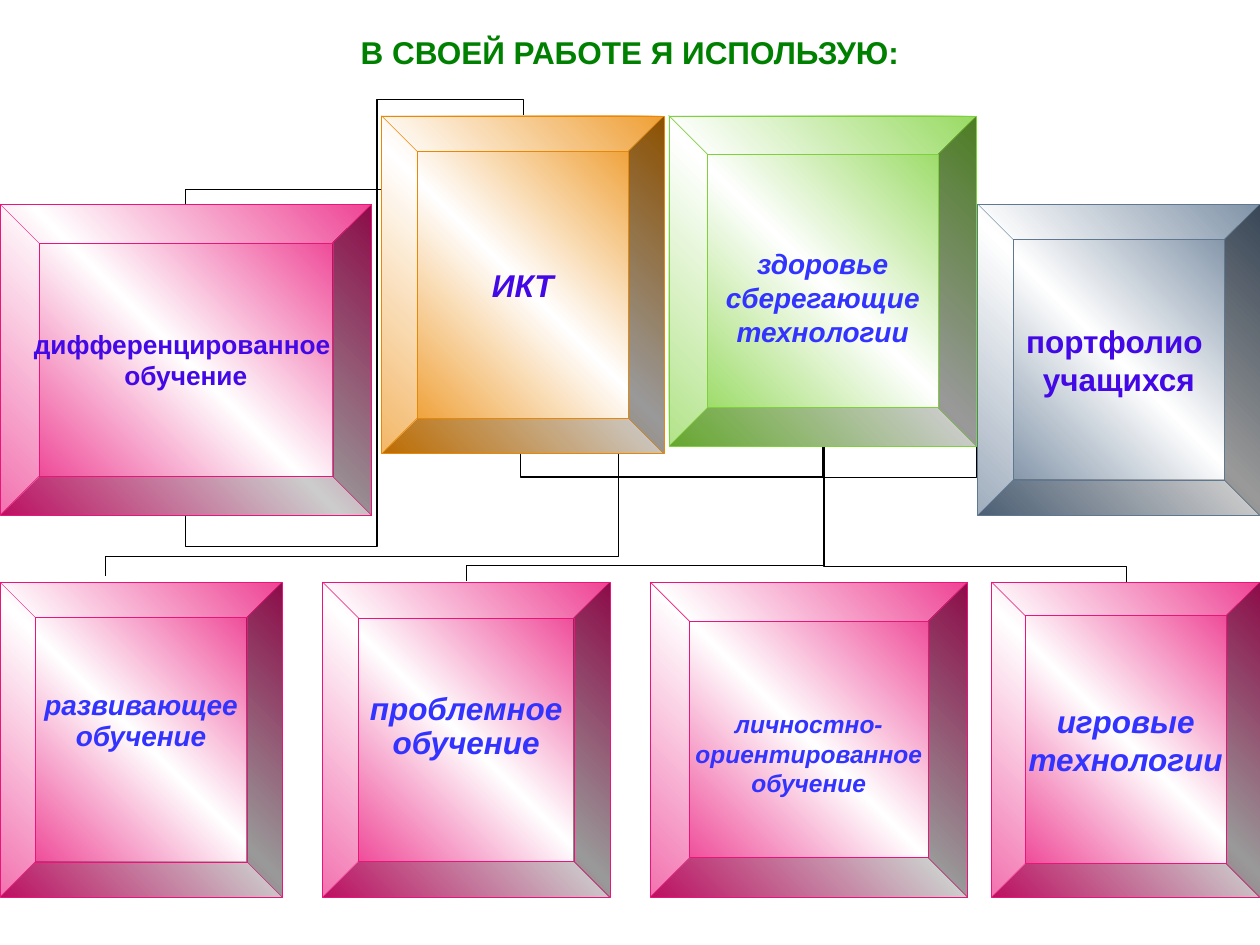
from copy import deepcopy

from pptx import Presentation
from pptx.dml.color import RGBColor
from pptx.enum.shapes import MSO_CONNECTOR, MSO_SHAPE
from pptx.enum.text import MSO_ANCHOR, PP_ALIGN
from pptx.oxml.ns import qn
from pptx.oxml.xmlchemy import OxmlElement
from pptx.util import Inches, Pt

GREEN = RGBColor(0x00, 0x80, 0x00)
BLACK = RGBColor(0x00, 0x00, 0x00)
WHITE = RGBColor(0xFF, 0xFF, 0xFF)
BLUE = RGBColor(0x33, 0x33, 0xFF)
VIOLET = RGBColor(0x42, 0x08, 0xE6)
PINK = RGBColor(0xEA, 0x15, 0x7A)
LIME = RGBColor(0x7F, 0xD1, 0x3B)
ORANGE = RGBColor(0xEB, 0x88, 0x03)
SLATE = RGBColor(0x5F, 0x77, 0x91)

LOWER_TOP, LOWER_HEIGHT = 4.62, 2.5
SIDE_TOP, SIDE_HEIGHT = 1.62, 2.47


class SlideBuilder:
    def __init__(self, slide, font="Arial"):
        self.slide = slide
        self.font = font

    def add_run(self, paragraph, text, size, color, italic=False):
        paragraph.alignment = PP_ALIGN.CENTER
        run = paragraph.add_run()
        run.text = text
        run.font.name = self.font
        run.font.size = Pt(size)
        run.font.bold = True
        run.font.italic = italic
        run.font.color.rgb = color

    def title(self, text, left, top, width, height):
        shape = self.slide.shapes.title
        shape.left, shape.top = Inches(left), Inches(top)
        shape.width, shape.height = Inches(width), Inches(height)
        shape.text_frame.vertical_anchor = MSO_ANCHOR.MIDDLE
        self.add_run(shape.text_frame.paragraphs[0], text, 18, GREEN)

    def elbow(self, left, top, width, height, rotation, flips, adjustments):
        """Draw a bent connector; the box is the one before rotation."""
        x_ends = [Inches(left), Inches(left + width)]
        y_ends = [Inches(top), Inches(top + height)]
        if "h" in flips:
            x_ends.reverse()
        if "v" in flips:
            y_ends.reverse()
        connector = self.slide.shapes.add_connector(
            MSO_CONNECTOR.ELBOW, x_ends[0], y_ends[0], x_ends[1], y_ends[1])
        connector.line.color.rgb = BLACK
        connector.line.width = Pt(0.75)
        properties = connector._element.spPr
        properties.find(qn("a:xfrm")).set("rot", str(rotation * 60000))
        geometry = properties.find(qn("a:prstGeom"))
        geometry.set("prst", f"bentConnector{len(adjustments) + 2}")
        guides = geometry.find(qn("a:avLst"))
        if guides is None:
            guides = OxmlElement("a:avLst")
            geometry.append(guides)
        for number, value in enumerate(adjustments, start=1):
            guide = OxmlElement("a:gd")
            guide.set("name", f"adj{number}")
            guide.set("fmla", f"val {round(value * 100000)}")
            guides.append(guide)
        properties.append(OxmlElement("a:effectLst"))

    def gradient(self, fill, shape, color):
        """Fill diagonally from the colour to white and back."""
        fill.gradient()
        fill.gradient_angle = 45
        stop_list = shape._element.spPr.find(qn("a:gradFill")).find(qn("a:gsLst"))
        stop_list.append(deepcopy(stop_list[-1]))
        for stop, position, shade in zip(
                fill.gradient_stops, (0, 0.5, 1), (color, WHITE, color)):
            stop.position = position
            stop.color.rgb = shade

    def bevel(self, box, color, lines, size, text_color, italic=True, wrap=True,
              inset_top=0, inset_bottom=0, spacing=None):
        shape = self.slide.shapes.add_shape(
            MSO_SHAPE.BEVEL, *(Inches(length) for length in box))
        shape.shadow.inherit = False
        shape.adjustments[0] = 0.125
        self.gradient(shape.fill, shape, color)
        shape.line.color.rgb = color
        shape.line.width = Pt(0.25)
        frame = shape.text_frame
        frame.word_wrap = wrap
        frame.vertical_anchor = MSO_ANCHOR.MIDDLE
        frame.margin_left = frame.margin_right = 0
        frame.margin_top = Inches(inset_top)
        frame.margin_bottom = Inches(inset_bottom)
        for index, text in enumerate(lines):
            paragraph = frame.add_paragraph() if index else frame.paragraphs[0]
            self.add_run(paragraph, text, size, text_color, italic)
            if spacing:
                paragraph.line_spacing = spacing


def main():
    presentation = Presentation()
    presentation.slide_width, presentation.slide_height = Inches(10), Inches(7.5)
    builder = SlideBuilder(presentation.slides.add_slide(presentation.slide_layouts[5]))
    builder.title("В СВОЕЙ РАБОТЕ Я ИСПОЛЬЗУЮ:", 0, 0, 10, 0.83)

    for connector in (
        (1.23, 1.16, 3.17, 2.68, 270, "hv", (-0.039, 0.434, 1.079)),
        (3.05, 0.05, 1.91, 5.06, 90, "v", (-0.065, 0.525, 1.131)),
        (6.53, 2.86, 1.22, 0.68, 180, "v", (0.001, 1.367)),
        (7.2, 2.88, 1.08, 2.4, 90, "h", (0.116,)),
        (4.58, 2.66, 1.08, 2.83, 270, "", (0.116,)),
        (2.31, 1.97, 1.13, 4.07, 270, "", (0.137,)),
    ):
        builder.elbow(*connector)

    builder.bevel((5.31, 0.92, 2.44, 2.62), LIME,
                  ["здоровье", "сберегающие технологии"], 16, BLUE, inset_top=0.26)

    for left, width, text, size, options in (
        (0, 2.24, "развивающее обучение", 16,
         dict(inset_top=0.26, inset_bottom=0.54, spacing=0.9)),
        (2.56, 2.28, "проблемное обучение", 18,
         dict(inset_top=0.31, inset_bottom=0.51, spacing=0.9)),
        (7.87, 2.13, "игровые технологии", 18, {}),
        (5.16, 2.52, "личностно-ориентированное обучение", 14,
         dict(inset_top=0.22)),
    ):
        builder.bevel((left, LOWER_TOP, width, LOWER_HEIGHT), PINK,
                      [text], size, BLUE, **options)

    for left, width, color, lines, size in (
        (7.76, 2.24, SLATE, ["портфолио ", "учащихся"], 18),
        (0, 2.95, PINK, ["дифференцированное ", "обучение"], 15),
    ):
        builder.bevel((left, SIDE_TOP, width, SIDE_HEIGHT), color,
                      lines, size, VIOLET, italic=False, wrap=False)
    builder.bevel((3.03, 0.92, 2.24, 2.68), ORANGE, ["ИКТ"], 18, VIOLET, wrap=False)

    presentation.save("out.pptx")


if __name__ == "__main__":
    main()
